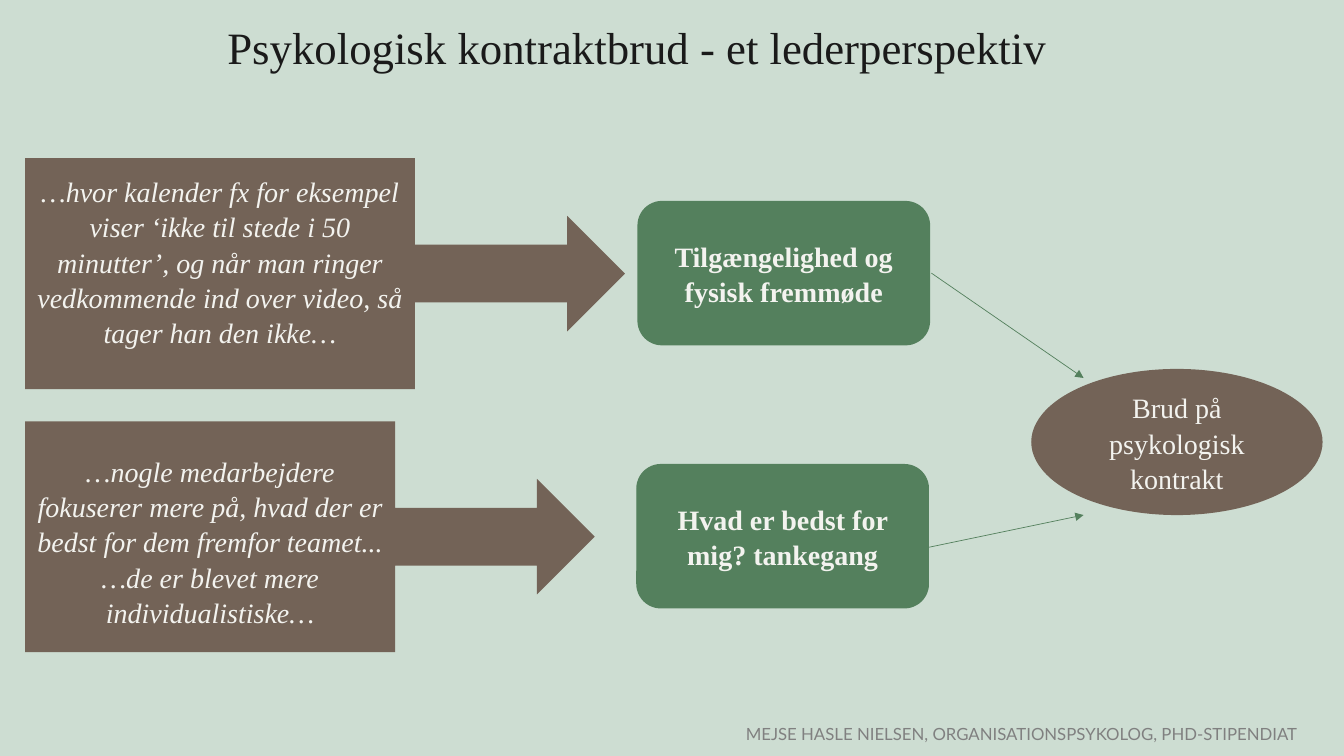
"""Builds the slide on breach of the psychological contract, seen by leaders."""
from lxml.etree import SubElement
from pptx import Presentation
from pptx.dml.color import RGBColor
from pptx.enum.shapes import MSO_CONNECTOR, MSO_SHAPE as SHAPE
from pptx.enum.text import MSO_ANCHOR as ANCHOR, PP_ALIGN as ALIGN
from pptx.oxml.ns import qn
from pptx.util import Pt

MINT = RGBColor(0xCD, 0xDD, 0xD2)
BROWN = RGBColor(0x73, 0x63, 0x57)
GREEN = RGBColor(0x54, 0x80, 0x5D)
CREAM = RGBColor(0xF3, 0xF3, 0xEF)
INK = RGBColor(0x1A, 0x1A, 0x1A)
GRAY = RGBColor(0x80, 0x80, 0x80)
SERIF, SANS = "Times New Roman", "Lato"

TITLE = "Psykologisk kontraktbrud - et lederperspektiv"
FOOTER = "MEJSE HASLE NIELSEN, ORGANISATIONSPSYKOLOG, PHD-STIPENDIAT"
BREACH = "Brud på psykologisk kontrakt"
ROWS = [
    {
        "quote": ["…hvor kalender fx for eksempel viser ‘ikke til stede i 50 minutter’, "
                  "og når man ringer vedkommende ind over video, så tager han den ikke…"],
        "quote_width": 428.4, "quote_shift": -9,
        "theme": "Tilgængelighed og fysisk fremmøde", "theme_left": 455.8,
        "arrow": (665.3, 195.1, 774, 270),
    },
    {
        "quote": ["…nogle medarbejdere fokuserer mere på, hvad der er bedst for dem "
                  "fremfor teamet...",
                  "…de er blevet mere individualistiske…"],
        "quote_width": 406.8, "quote_shift": 3,
        "theme": "Hvad er bedst for mig? tankegang", "theme_left": 455,
        "arrow": (663.1, 391, 774, 367.9),
    },
]
QUOTE_LEFT, QUOTE_TOP, QUOTE_HEIGHT = 18, 113, 164.9
THEME_TOP, THEME_WIDTH, THEME_HEIGHT = 144, 208.1, 102.2
ROW_PITCH = 187.9
BREACH_BOX = (736.6, 263.5, 208.1, 104.4)
TITLE_BOX = (88.6, 18, 733, 76.3)
FOOTER_BOX = (525.6, 491, 425, 43.9)
INSET = 3.6


def write(frame, paragraphs, size=20, font=SERIF, color=CREAM, bold=False, italic=False,
          align=ALIGN.CENTER, anchor=ANCHOR.MIDDLE, spacing=1.05):
    frame.word_wrap = True
    frame.vertical_anchor = anchor
    for index, text in enumerate(paragraphs):
        paragraph = frame.add_paragraph() if index else frame.paragraphs[0]
        paragraph.alignment = align
        paragraph.line_spacing = spacing
        run = paragraph.add_run()
        run.text = text
        run.font.size, run.font.name = Pt(size), font
        run.font.bold, run.font.italic = bold, italic
        run.font.color.rgb = color


def add_label(slide, box, text, **style):
    label = slide.shapes.add_textbox(*map(Pt, box))
    write(label.text_frame, [text], **style)


def add_block(slide, kind, box, fill, paragraphs, outlined=False, **style):
    block = slide.shapes.add_shape(kind, *map(Pt, box))
    block.shadow.inherit = False
    block.fill.solid()
    block.fill.fore_color.rgb = fill
    if outlined:
        block.line.color.rgb = fill
        block.line.width = Pt(1)
    else:
        block.line.fill.background()
    write(block.text_frame, paragraphs, **style)
    return block


def add_arrow(slide, ends):
    arrow = slide.shapes.add_connector(MSO_CONNECTOR.STRAIGHT, *map(Pt, ends))
    arrow.line.color.rgb = GREEN
    arrow.line.width = Pt(0.5)
    SubElement(arrow.line._get_or_add_ln(), qn("a:tailEnd"), type="triangle")
    SubElement(arrow._element.spPr, qn("a:effectLst"))


def add_row(slide, row, drop):
    quote_box = (QUOTE_LEFT, QUOTE_TOP + drop, row["quote_width"], QUOTE_HEIGHT)
    quote = add_block(slide, SHAPE.RIGHT_ARROW_CALLOUT, quote_box, BROWN, row["quote"],
                      italic=True)
    shift = row["quote_shift"]
    quote.text_frame.margin_top = Pt(INSET + 2 * max(shift, 0))
    quote.text_frame.margin_bottom = Pt(INSET + 2 * max(-shift, 0))
    theme_box = (row["theme_left"], THEME_TOP + drop, THEME_WIDTH, THEME_HEIGHT)
    add_block(slide, SHAPE.ROUNDED_RECTANGLE, theme_box, GREEN, [row["theme"]],
              outlined=True, bold=True)
    add_arrow(slide, row["arrow"])


def main():
    deck = Presentation()
    deck.slide_width, deck.slide_height = Pt(960), Pt(540)
    slide = deck.slides.add_slide(deck.slide_layouts[6])
    slide.background.fill.solid()
    slide.background.fill.fore_color.rgb = MINT
    add_label(slide, TITLE_BOX, TITLE, size=32, color=INK, anchor=ANCHOR.TOP, spacing=0.8)
    add_block(slide, SHAPE.OVAL, BREACH_BOX, BROWN, [BREACH])
    for index, row in enumerate(ROWS):
        add_row(slide, row, index * ROW_PITCH)
    add_label(slide, FOOTER_BOX, FOOTER, size=12, font=SANS, color=GRAY,
              align=ALIGN.LEFT, anchor=ANCHOR.BOTTOM, spacing=1.0)
    deck.save("out.pptx")


if __name__ == "__main__":
    main()
